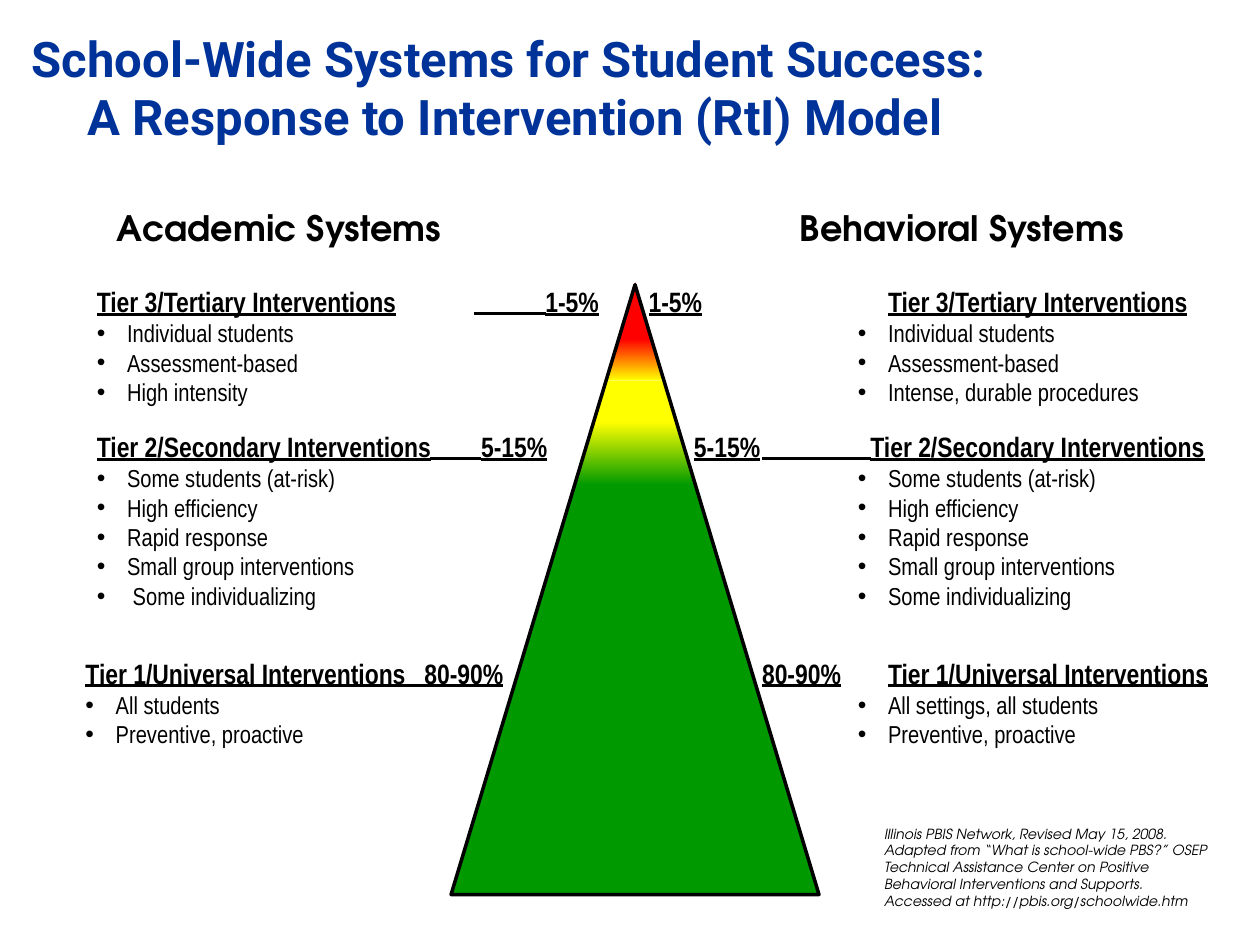
from dataclasses import dataclass

from lxml.etree import SubElement
from pptx import Presentation
from pptx.dml.color import RGBColor
from pptx.enum.shapes import MSO_CONNECTOR, MSO_SHAPE
from pptx.enum.text import MSO_ANCHOR, MSO_AUTO_SIZE, PP_ALIGN
from pptx.oxml.ns import qn
from pptx.util import Inches, Pt


@dataclass(frozen=True)
class Theme:
    white: RGBColor = RGBColor(0xFF, 0xFF, 0xFF)
    black: RGBColor = RGBColor(0x00, 0x00, 0x00)
    blue: RGBColor = RGBColor(0x00, 0x33, 0x99)
    green: RGBColor = RGBColor(0x00, 0x99, 0x00)
    yellow: RGBColor = RGBColor(0xFF, 0xFF, 0x00)
    red: RGBColor = RGBColor(0xFF, 0x00, 0x00)
    title_font: str = "Roboto"
    label_font: str = "TeX Gyre Adventor"
    tier_font: str = "Arial Narrow"
    title_size: int = 28
    label_size: int = 20
    tier_size: int = 16
    item_size: int = 14
    source_size: int = 8


# Pyramid geometry, in inches
CENTER, APEX, BASE, HALF_BASE = 5.04, 2.26, 7.1, 1.46


class SlideBuilder:
    def __init__(self, page, theme):
        self.page = page
        self.theme = theme

    def style(self, paragraph, name, size, color=None, **flags):
        font = paragraph.font
        font.name, font.size = name, Pt(size)
        font.color.rgb = color or self.theme.black
        for flag, value in flags.items():
            setattr(font, flag, value)

    def title(self, text, left, top, width, height):
        box = self.page.shapes.title
        box.left, box.top = Inches(left), Inches(top)
        box.width, box.height = Inches(width), Inches(height)
        box.fill.solid()
        box.fill.fore_color.rgb = self.theme.white
        frame = box.text_frame
        frame.text = text
        frame.auto_size = MSO_AUTO_SIZE.NONE
        frame.vertical_anchor = MSO_ANCHOR.MIDDLE
        para = frame.paragraphs[0]
        para.alignment = PP_ALIGN.CENTER
        self.style(para, self.theme.title_font, self.theme.title_size,
                   self.theme.blue, bold=True)

    def frame(self, left, top, width, height, wrap=True):
        box = self.page.shapes.add_textbox(
            Inches(left), Inches(top), Inches(width), Inches(height))
        box.text_frame.word_wrap = wrap
        box.text_frame.auto_size = MSO_AUTO_SIZE.SHAPE_TO_FIT_TEXT
        return box.text_frame

    def text(self, text, place, size, wrap=True, **flags):
        para = self.frame(*place, wrap=wrap).paragraphs[0]
        para.text = text
        self.style(para, self.theme.label_font, size, **flags)

    def tier(self, place, heading, tabs, items, indent):
        """Underlined heading set on tab stops, then a bulleted list."""
        frame = self.frame(*place)
        para = frame.paragraphs[0]
        para.text = heading
        self.style(para, self.theme.tier_font, self.theme.tier_size,
                   bold=True, underline=True)
        stops = SubElement(para._p.get_or_add_pPr(), qn("a:tabLst"))
        for position in tabs:
            SubElement(stops, qn("a:tab"), pos=str(Inches(position)), algn="l")
        for item in items:
            para = frame.add_paragraph()
            para.text = item
            self.style(para, self.theme.tier_font, self.theme.item_size)
            properties = para._p.get_or_add_pPr()
            properties.set("marL", str(Inches(indent)))
            properties.set("indent", str(Inches(-0.24)))
            SubElement(properties, qn("a:buFont"), typeface="Arial")
            SubElement(properties, qn("a:buChar"), char="•")

    def rule(self, start, end, y):
        line = self.page.shapes.add_connector(
            MSO_CONNECTOR.STRAIGHT, Inches(start), Inches(y), Inches(end), Inches(y))
        line.line.color.rgb = self.theme.black
        line.line.width = Pt(1.5)
        SubElement(line._element.spPr, qn("a:effectLst"))

    def triangle(self, left, top, width, height, color=None):
        """Solid when a colour is given, otherwise an outline."""
        shape = self.page.shapes.add_shape(
            MSO_SHAPE.ISOSCELES_TRIANGLE,
            Inches(left), Inches(top), Inches(width), Inches(height))
        shape.shadow.inherit = False
        if color is not None:
            shape.fill.solid()
            shape.fill.fore_color.rgb = color
            shape.line.fill.background()
        else:
            shape.fill.background()
            shape.line.color.rgb = self.theme.black
            shape.line.width = Pt(2)

    def band(self, top, bottom, *colors):
        """Slice of the pyramid; two colours blend from bottom to top."""
        upper, lower = ((y - APEX) * HALF_BASE / (BASE - APEX) for y in (top, bottom))
        corners = [(CENTER - lower, bottom), (CENTER - upper, top),
                   (CENTER + upper, top), (CENTER + lower, bottom)]
        points = [(Inches(x), Inches(y)) for x, y in corners]
        builder = self.page.shapes.build_freeform(*points[0])
        builder.add_line_segments(points[1:], close=True)
        shape = builder.convert_to_shape()
        shape.shadow.inherit = False
        shape.line.fill.background()
        if len(colors) == 1:
            shape.fill.solid()
            shape.fill.fore_color.rgb = colors[0]
        else:
            shape.fill.gradient()
            shape.fill.gradient_angle = 90
            for stop, color in zip(shape.fill.gradient_stops, colors):
                stop.color.rgb = color


def main():
    theme = Theme()
    deck = Presentation()
    deck.slide_width, deck.slide_height = Inches(10), Inches(7.5)
    slide = SlideBuilder(deck.slides.add_slide(deck.slide_layouts[5]), theme)

    # Title and column labels
    slide.title("School-Wide Systems for Student Success: \v"
                "A Response to Intervention (RtI) Model", 0, 0.19, 8.17, 1)
    for label, left in (("Academic Systems", 0.83), ("Behavioral Systems", 6.25)):
        slide.text(label, (left, 1.59, 2.78, 0.43), theme.label_size,
                   wrap=False, bold=True)

    # Tiers: name, share, top, height, left box, tab stops, items per side
    shared = ["Some students (at-risk)", "High efficiency", "Rapid response",
              "Small group interventions"]
    tiers = [
        ("Tier 3/Tertiary Interventions", "1-5%", 2.21, 1.08,
         (0.67, 4.24), [3.56], [0.1, 2],
         ["Individual students", "Assessment-based", "High intensity"],
         ["Individual students", "Assessment-based", "Intense, durable procedures"]),
        ("Tier 2/Secondary Interventions", "5-15%", 3.36, 1.78,
         (0.67, 3.85), [3.05], [0.46, 1.86],
         shared + [" Some individualizing"], shared + ["Some individualizing"]),
        ("Tier 1/Universal Interventions", "80-90%", 5.16, 0.84,
         (0.58, 3.58), [2.69], [1, 2],
         ["All students", "Preventive, proactive"],
         ["All settings, all students", "Preventive, proactive"]),
    ]
    for (name, share, top, height, (left, width), left_tabs, right_tabs,
         academic, behavioral) in tiers:
        slide.tier((left, top, width, height), f"{name}\t{share}",
                   left_tabs, academic, 0.24)
        slide.tier((4.95, top, 4.76, height), f"\t{share}\t{name}",
                   right_tabs, behavioral, 2)

    # Rules that carry the heading underline across the gaps
    for start, end, y in ((3.76, 4.33, 2.49), (3.41, 3.82, 3.64),
                          (6.05, 6.91, 3.64), (3.21, 3.38, 5.44)):
        slide.rule(start, end, y)

    # Pyramid
    slide.triangle(4.91, 2.24, 0.27, 0.45, theme.red)
    slide.band(3.77, BASE, theme.green)
    slide.band(3.35, 3.85, theme.green, theme.yellow)
    slide.band(3.02, 3.35, theme.yellow)
    slide.band(2.69, 3.02, theme.yellow, theme.red)
    slide.triangle(CENTER - HALF_BASE, APEX, 2 * HALF_BASE, BASE - APEX)

    # Source note
    slide.text("Illinois PBIS Network, Revised May 15, 2008. Adapted from “What is "
               "school-wide PBS?” OSEP Technical Assistance Center on Positive "
               "Behavioral Interventions and Supports. Accessed at "
               "http://pbis.org/schoolwide.htm",
               (6.92, 6.5, 2.8, 0.77), theme.source_size, italic=True)

    deck.save("out.pptx")


if __name__ == "__main__":
    main()
